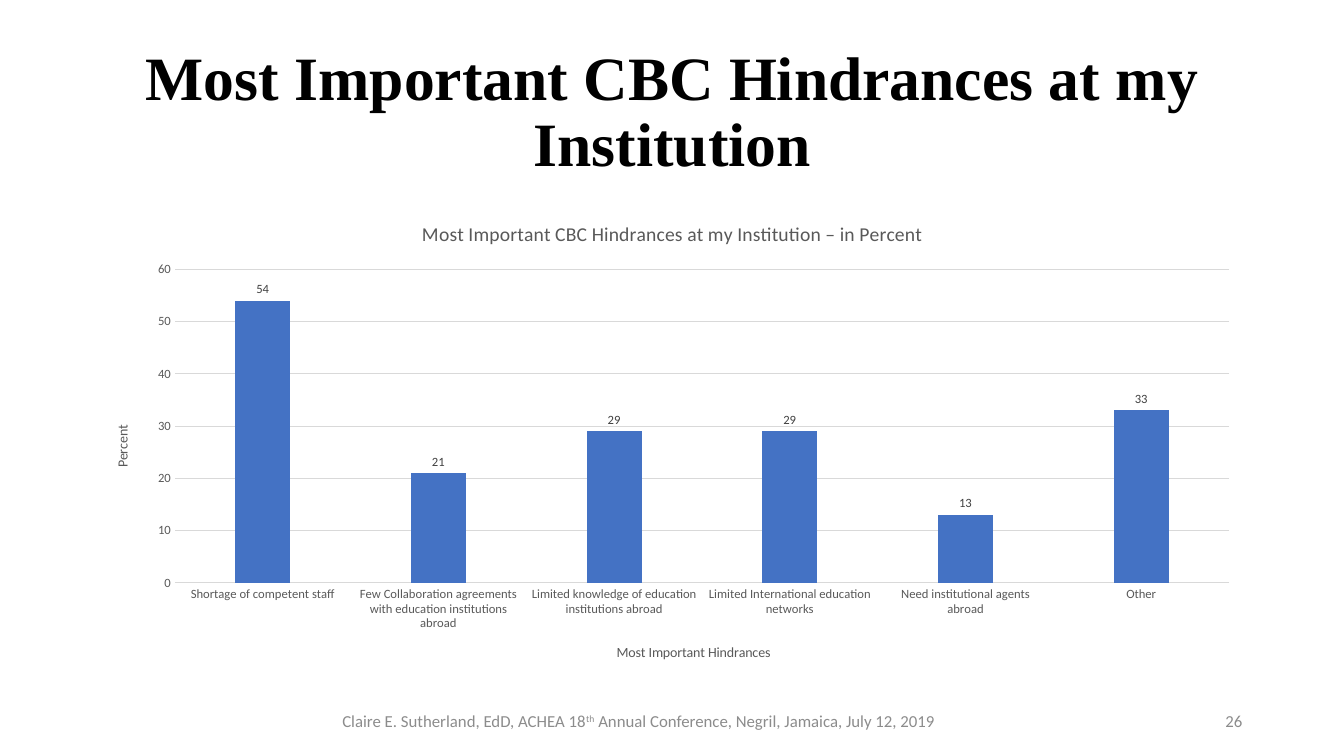
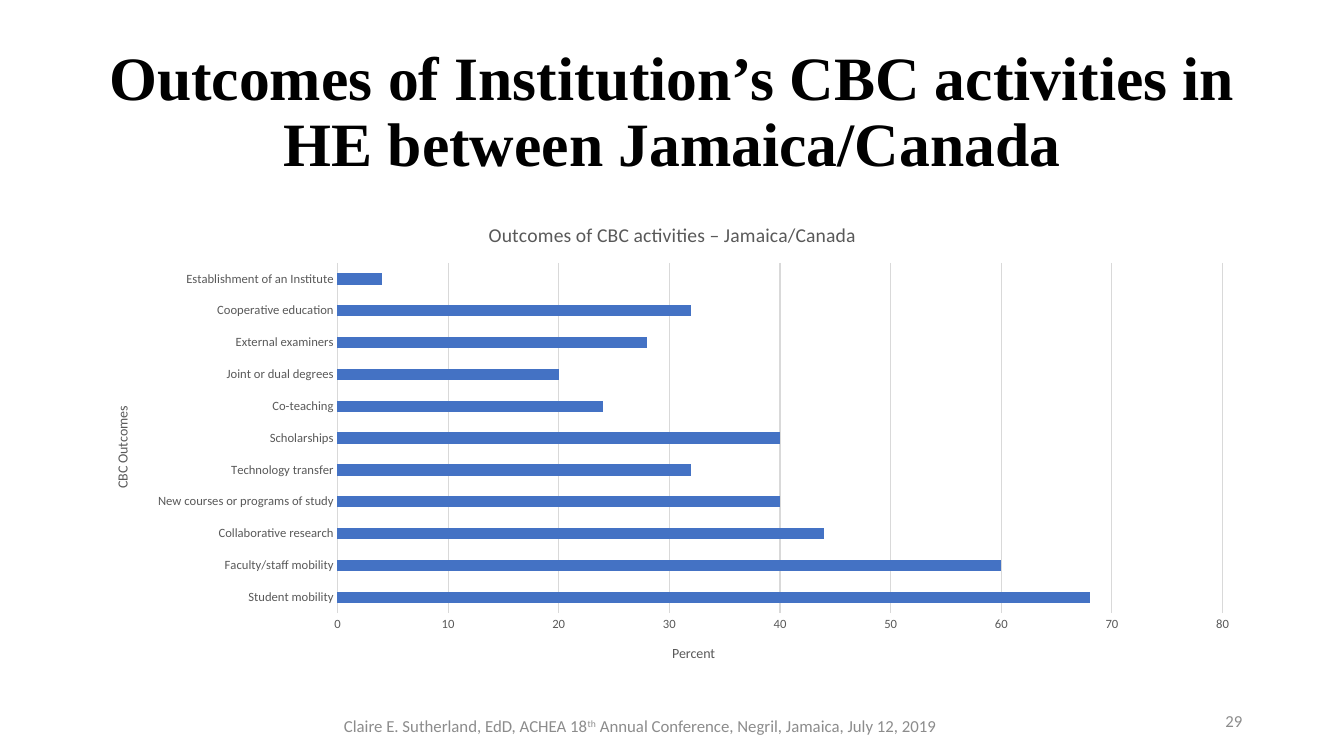
from pptx import Presentation
from pptx.chart.data import CategoryChartData
from pptx.dml.color import RGBColor
from pptx.enum.chart import XL_CHART_TYPE, XL_LABEL_POSITION, XL_TICK_MARK
from pptx.enum.text import MSO_ANCHOR, MSO_AUTO_SIZE, PP_ALIGN
from pptx.util import Emu, Pt

PX = 9144
BLACK = RGBColor(0x00, 0x00, 0x00)
FOOTER_GRAY = RGBColor(0x8C, 0x8C, 0x8C)
AXIS_GRAY = RGBColor(0x59, 0x59, 0x59)
LABEL_GRAY = RGBColor(0x40, 0x40, 0x40)
GRID_GRAY = RGBColor(0xD9, 0xD9, 0xD9)
BAR_BLUE = RGBColor(0x44, 0x72, 0xC4)
TITLE_FONT = "Times New Roman"
BODY_FONT = "Calibri"
TITLE_ONLY = 5

FOOTER_RUNS = [
    ("Claire E. Sutherland, EdD, ACHEA 18", False),
    ("th", True),
    (" Annual Conference, Negril, Jamaica, July 12, 2019", False),
]

HINDRANCES = [
    ("Shortage of competent staff", 54),
    ("Few Collaboration agreements with education institutions abroad", 21),
    ("Limited knowledge of education institutions abroad", 29),
    ("Limited International education networks", 29),
    ("Need institutional agents abroad", 13),
    ("Other", 33),
]

OUTCOMES = [
    ("Student mobility", 68),
    ("Faculty/staff mobility", 60),
    ("Collaborative research", 44),
    ("New courses or programs of study", 40),
    ("Technology transfer", 32),
    ("Scholarships", 40),
    ("Co-teaching", 24),
    ("Joint or dual degrees", 20),
    ("External examiners", 28),
    ("Cooperative education", 32),
    ("Establishment of an Institute", 4),
]


def px(*lengths):
    return [Emu(n * PX) for n in lengths]


def style_font(font, size, color, name=BODY_FONT, bold=False):
    font.size = Pt(size)
    font.color.rgb = color
    font.name = name
    font.bold = bold


def set_title(s, text):
    sp = s.shapes.title
    sp.left, sp.top, sp.width, sp.height = px(92, 40, 1150, 145)
    tf = sp.text_frame
    tf.auto_size = MSO_AUTO_SIZE.NONE
    tf.vertical_anchor = MSO_ANCHOR.MIDDLE
    p = tf.paragraphs[0]
    p.alignment = PP_ALIGN.CENTER
    p.line_spacing = 0.9
    r = p.add_run()
    r.text = text
    style_font(r.font, 44, BLACK, TITLE_FONT, True)


def add_footer_text(s, box, runs, align):
    tf = s.shapes.add_textbox(*px(*box)).text_frame
    tf.word_wrap = True
    tf.vertical_anchor = MSO_ANCHOR.MIDDLE
    p = tf.paragraphs[0]
    p.alignment = align
    for text, raised in runs:
        r = p.add_run()
        r.text = text
        style_font(r.font, 12, FOOTER_GRAY)
        if raised:
            r.font._element.set("baseline", "30000")


def add_chart_text(tf, text, size):
    r = tf.paragraphs[0].add_run()
    r.text = text
    style_font(r.font, size, AXIS_GRAY)


def style_axis(axis, title, upright):
    axis.major_tick_mark = axis.minor_tick_mark = XL_TICK_MARK.NONE
    style_font(axis.tick_labels.font, 9, AXIS_GRAY)
    tf = axis.axis_title.text_frame
    add_chart_text(tf, title, 10)
    if upright:
        body = tf._txBody.bodyPr
        body.set("rot", "-5400000")
        body.set("vert", "horz")


def add_bar_chart(s, top, kind, title, cat_title, rows, maximum, gap, overlap):
    data = CategoryChartData(number_format="0")
    data.categories = [name for name, _ in rows]
    data.add_series("Series 1", [value for _, value in rows])
    chart = s.shapes.add_chart(kind, *px(92, top, 1150, 476), data).chart
    style_font(chart.font, 10, BLACK)
    chart.has_legend = False
    chart.has_title = True
    add_chart_text(chart.chart_title.text_frame, title, 14)

    columns = kind == XL_CHART_TYPE.COLUMN_CLUSTERED
    cat, val = chart.category_axis, chart.value_axis
    style_axis(cat, cat_title, not columns)
    style_axis(val, "Percent", columns)
    cat.format.line.color.rgb = GRID_GRAY
    cat.format.line.width = Pt(0.75)
    val.format.line.fill.background()
    val.minimum_scale, val.maximum_scale, val.major_unit = 0, maximum, 10
    val.has_major_gridlines = True
    val.major_gridlines.format.line.color.rgb = GRID_GRAY
    val.major_gridlines.format.line.width = Pt(0.75)

    plot = chart.plots[0]
    plot.vary_by_categories = False
    plot.gap_width, plot.overlap = gap, overlap
    fill = plot.series[0].format.fill
    fill.solid()
    fill.fore_color.rgb = BAR_BLUE
    return plot


def show_values(plot):
    labels = plot.series[0].data_labels
    labels.show_value = True
    labels.position = XL_LABEL_POSITION.OUTSIDE_END
    labels.number_format = "0"
    labels.number_format_is_linked = False
    style_font(labels.font, 9, LABEL_GRAY)


def add_slide(prs, title, number, footer_box):
    s = prs.slides.add_slide(prs.slide_layouts[TITLE_ONLY])
    set_title(s, title)
    add_footer_text(s, footer_box, FOOTER_RUNS, PP_ALIGN.CENTER)
    add_footer_text(s, (942, 695, 300, 40), [(str(number), False)], PP_ALIGN.RIGHT)
    return s


def main():
    prs = Presentation()
    prs.slide_width, prs.slide_height = px(1333, 750)

    s = add_slide(prs, "Most Important CBC Hindrances at my Institution",
                  26, (133, 685, 1001, 60))
    plot = add_bar_chart(
        s, 200, XL_CHART_TYPE.COLUMN_CLUSTERED,
        "Most Important CBC Hindrances at my Institution – in Percent",
        "Most Important Hindrances", HINDRANCES, 60, 219, -27)
    show_values(plot)

    s = add_slide(prs, "Outcomes of Institution’s CBC activities in HE between Jamaica/Canada",
                  29, (109, 694, 1052, 52))
    add_bar_chart(
        s, 201, XL_CHART_TYPE.BAR_CLUSTERED,
        "Outcomes of CBC activities – Jamaica/Canada",
        "CBC Outcomes", OUTCOMES, 80, 182, 0)

    prs.save("out.pptx")


if __name__ == "__main__":
    main()
